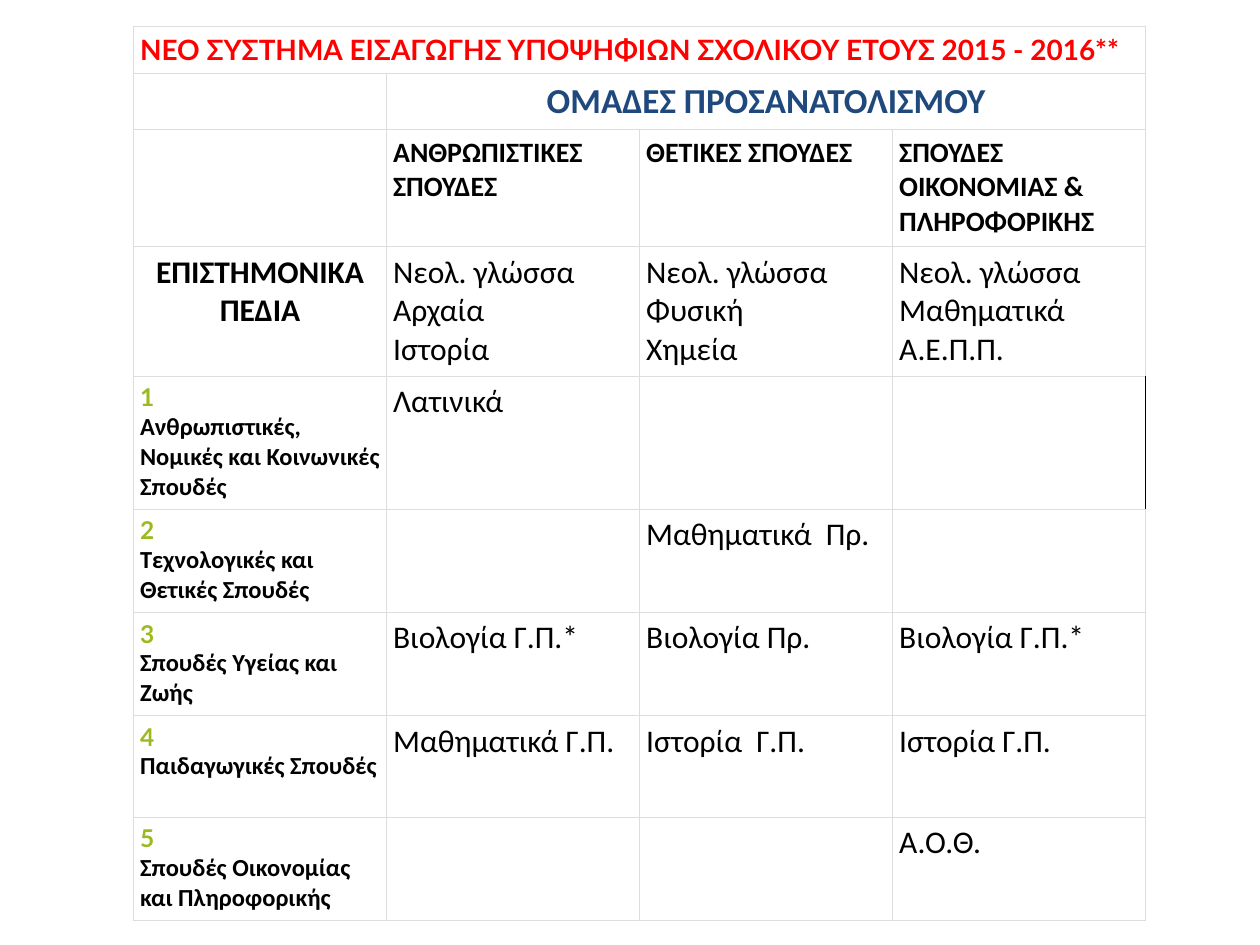
"""Build the table slide on the university entrance system for 2015 - 2016."""
from dataclasses import dataclass

from lxml import etree
from pptx import Presentation
from pptx.dml.color import RGBColor
from pptx.enum.text import PP_ALIGN
from pptx.oxml.ns import qn
from pptx.util import Pt

LEFT, CENTER = PP_ALIGN.LEFT, PP_ALIGN.CENTER


@dataclass(frozen=True)
class Style:
    font: str
    size: float
    color: str
    bold: bool = True
    align: PP_ALIGN = LEFT


class Theme:
    WHITE, GRID, BLACK = "FFFFFF", "DDDDDD", "000000"
    GRID_WIDTH, EDGE_WIDTH, INSET = 0.75, 1, 3.75
    TITLE = Style("Lato", 16, "FF0000")
    GROUPS = Style("Calibri", 20, "1F497D", align=CENTER)
    HEADER = Style("Calibri", 16, BLACK)
    FIELDS = Style("Calibri", 18, BLACK, align=CENTER)
    SUBJECT = Style("Calibri", 18, BLACK, bold=False)
    NUMBER = Style("Lato", 14, "9BBA1F")
    FIELD = Style("Calibri", 14, BLACK)


class SlideBuilder:
    def __init__(self, prs, theme):
        self.theme = theme
        self.s = prs.slides.add_slide(prs.slide_layouts[6])

    def table(self, left, top, col_width, cols, heights):
        frame = self.s.shapes.add_table(
            len(heights), cols, Pt(left), Pt(top), Pt(col_width * cols), Pt(sum(heights)))
        table = frame.table
        table.first_row = table.horz_banding = False
        for col in table.columns:
            col.width = Pt(col_width)
        for row, height in zip(table.rows, heights):
            row.height = Pt(height)
        return table

    def border(self, cell, side, color, width):
        ln = etree.SubElement(cell._tc.get_or_add_tcPr(), qn(f"a:ln{side}"), w=str(Pt(width)))
        fill = etree.SubElement(ln, qn("a:solidFill"))
        etree.SubElement(fill, qn("a:srgbClr"), val=color)

    def cell(self, cell, lines, black_edge=False):
        t = self.theme
        for side in "LRTB":
            dark = black_edge and side == "R"
            self.border(cell, side, t.BLACK if dark else t.GRID,
                        t.EDGE_WIDTH if dark else t.GRID_WIDTH)
        cell.fill.solid()
        cell.fill.fore_color.rgb = RGBColor.from_string(t.WHITE)
        cell.margin_left = cell.margin_right = Pt(t.INSET)
        cell.margin_top = cell.margin_bottom = Pt(t.INSET)
        tf = cell.text_frame
        for i, (text, style) in enumerate(lines):
            p = tf.paragraphs[0] if i == 0 else tf.add_paragraph()
            p.alignment = style.align
            r = p.add_run()
            r.text = text
            r.font.name, r.font.size, r.font.bold = style.font, Pt(style.size), style.bold
            r.font.color.rgb = RGBColor.from_string(style.color)


HEADERS = ["ΑΝΘΡΩΠΙΣΤΙΚΕΣ ΣΠΟΥΔΕΣ", "ΘΕΤΙΚΕΣ ΣΠΟΥΔΕΣ", "ΣΠΟΥΔΕΣ ΟΙΚΟΝΟΜΙΑΣ & ΠΛΗΡΟΦΟΡΙΚΗΣ"]
COMMON = [
    ["Νεολ. γλώσσα", "Αρχαία", "Ιστορία"],
    ["Νεολ. γλώσσα", "Φυσική", "Χημεία"],
    ["Νεολ. γλώσσα", "Μαθηματικά", "Α.Ε.Π.Π."],
]
FIELDS = [
    ("Ανθρωπιστικές, Νομικές και Κοινωνικές Σπουδές", ["Λατινικά", "", ""]),
    ("Τεχνολογικές και Θετικές Σπουδές", ["", "Μαθηματικά  Πρ.", ""]),
    ("Σπουδές Υγείας και Ζωής", ["Βιολογία Γ.Π.*", "Βιολογία Πρ.", "Βιολογία Γ.Π.*"]),
    ("Παιδαγωγικές Σπουδές", ["Μαθηματικά Γ.Π.", "Ιστορία  Γ.Π.", "Ιστορία Γ.Π."]),
    ("Σπουδές Οικονομίας και Πληροφορικής", ["", "", "Α.Ο.Θ."]),
]
ROW_HEIGHTS = [27, 32, 67, 74, 76, 59, 59, 58, 59]
EDGE_CELL = (4, 3)


def table_rows(t):
    """Return the styled lines of every cell, row by row."""
    rows = [
        [[("ΝΕΟ ΣΥΣΤΗΜΑ ΕΙΣΑΓΩΓΗΣ ΥΠΟΨΗΦΙΩΝ ΣΧΟΛΙΚΟΥ ΕΤΟΥΣ 2015 - 2016**", t.TITLE)], [], [], []],
        [[], [("ΟΜΑΔΕΣ ΠΡΟΣΑΝΑΤΟΛΙΣΜΟΥ", t.GROUPS)], [], []],
        [[]] + [[(text, t.HEADER)] for text in HEADERS],
        [[("ΕΠΙΣΤΗΜΟΝΙΚΑ ΠΕΔΙΑ", t.FIELDS)]]
        + [[(text, t.SUBJECT) for text in group] for group in COMMON],
    ]
    for number, (field, subjects) in enumerate(FIELDS, 1):
        rows.append([[(str(number), t.NUMBER), (field, t.FIELD)]]
                    + [[(text, t.SUBJECT)] if text else [] for text in subjects])
    return rows


def main():
    prs = Presentation()
    prs.slide_width, prs.slide_height = Pt(720), Pt(540)
    builder = SlideBuilder(prs, Theme)
    table = builder.table(76.3, 15, 144.6, 4, ROW_HEIGHTS)
    for first_col, row in ((0, 0), (1, 1)):
        table.cell(row, first_col).merge(table.cell(row, 3))
    for i, row in enumerate(table_rows(Theme)):
        for j, lines in enumerate(row):
            builder.cell(table.cell(i, j), lines, (i, j) == EDGE_CELL)
    prs.save("out.pptx")


if __name__ == "__main__":
    main()
